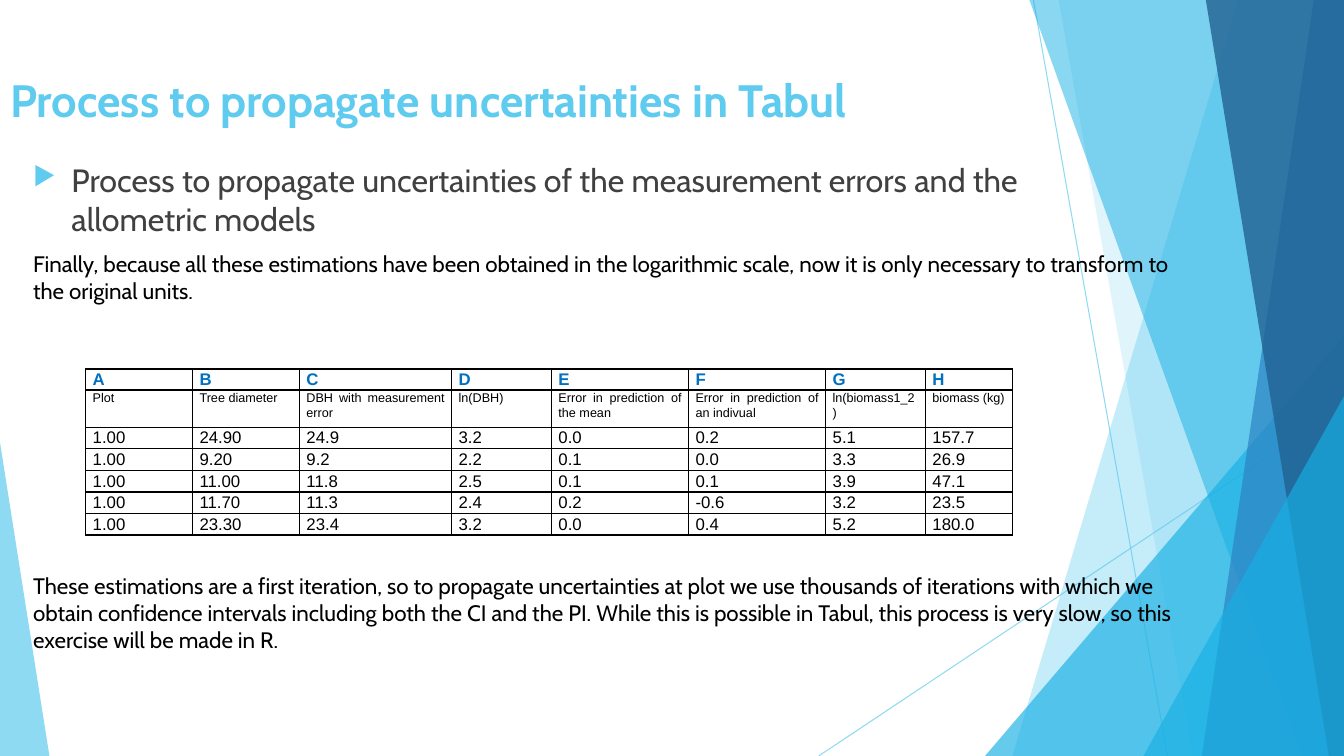
import pptx
import pptx.util
import pptx.dml.color
import pptx.enum.shapes
import pptx.enum.text
import pptx.oxml
import pptx.oxml.ns
import lxml.etree

COLORS = {
    "sky": "5FCBEF", "cyan": "17B0E4", "blue": "2E83C3", "navy": "226292",
    "body": "404040", "black": "000000", "header": "0070C0",
}
GRID = pptx.util.Inches(0.1)  # the slide is 133.3 columns by 75 rows
COLUMNS, ROWS = 133.3, 75
PP_ALIGN = pptx.enum.text.PP_ALIGN
qn = pptx.oxml.ns.qn


def write_text(frame, text, size, color="black", font="Cabin", bold=False,
               align=PP_ALIGN.LEFT, line_spacing=1.0, space_before=0, new=False):
    """Write one paragraph, the first of the frame unless new is set."""
    paragraph = frame.add_paragraph() if new else frame.paragraphs[0]
    paragraph.alignment = align
    paragraph.line_spacing = line_spacing
    paragraph.space_before = pptx.util.Pt(space_before)
    run = paragraph.add_run()
    run.text = text
    run.font.size = pptx.util.Pt(size)
    run.font.name = font
    run.font.bold = bold
    run.font.color.rgb = pptx.dml.color.RGBColor.from_string(COLORS[color])
    return paragraph


def paint(shape, color, opacity):
    """Give a facet its translucent fill, or a connector its translucent line."""
    rgb = pptx.dml.color.RGBColor.from_string(COLORS[color])
    if hasattr(shape, "fill"):
        shape.shadow.inherit = False
        shape.fill.solid()
        shape.fill.fore_color.rgb = rgb
        shape.line.fill.background()
    else:
        shape.line.color.rgb = rgb
        shape.line.width = pptx.util.Pt(0.75)
        lxml.etree.SubElement(shape._element.spPr, qn("a:effectLst"))
    color_element = next(shape._element.iter(qn("a:srgbClr")))
    lxml.etree.SubElement(color_element, qn("a:alpha"), val=str(opacity * 1000))


presentation = pptx.Presentation()
presentation.slide_width = round(COLUMNS * GRID)
presentation.slide_height = ROWS * GRID
slide = presentation.slides.add_slide(presentation.slide_layouts[5])
shapes = slide.shapes

# Thin lines behind the facets
for ends in [(102.5, 0, 115.8, ROWS), (COLUMNS, 40.3, 81.2, ROWS)]:
    line = shapes.add_connector(pptx.enum.shapes.MSO_CONNECTOR.STRAIGHT,
                                *(round(end * GRID) for end in ends))
    paint(line, "sky", 70)

# Facets: a band runs from its top and bottom columns to the right edge,
# a triangle is (left, top, width, apex) and stands on the bottom edge
facets = [
    ("band", (122.8, 100.4), "sky", 36),
    ("band", (105, 118.3), "sky", 20),
    ("triangle", (97.7, 33.3, 35.6, 1), "cyan", 66),
    ("band", (102.1, 129.1), "cyan", 50),
    ("band", (130.3, 119.2), "blue", 70),
    ("band", (119.6, 131.8), "navy", 80),
    ("triangle", (113.4, 39.3, 19.9, 1), "cyan", 66),
    ("triangle", (0, 43.9, 4.9, 0), "sky", 70),
]
for kind, geometry, color, opacity in facets:
    if kind == "band":
        top, bottom = geometry
        builder = shapes.build_freeform(round(top * GRID), 0)
        corners = [(COLUMNS, 0), (COLUMNS, ROWS), (bottom, ROWS)]
        builder.add_line_segments([(round(x * GRID), round(y * GRID)) for x, y in corners])
        facet = builder.convert_to_shape()
    else:
        left, top, width, apex = geometry
        facet = shapes.add_shape(
            pptx.enum.shapes.MSO_SHAPE.ISOSCELES_TRIANGLE,
            *(round(length * GRID) for length in (left, top, width, ROWS - top)))
        facet.adjustments[0] = apex
    paint(facet, color, opacity)

# Title, bulleted heading and explanation
title = shapes.title
heading = shapes.add_textbox(0, 0, 0, 0)
explanation = shapes.add_textbox(0, 0, 0, 0)
for shape, place in [(title, (0, 6.7, 107.2, 7.4)),
                     (heading, (2.3, 15.4, 113.9, 5.5)),
                     (explanation, (2.3, 24.3, 117.5, 44.1))]:
    shape.left, shape.top, shape.width, shape.height = (
        round(length * GRID) for length in place)
    shape.text_frame.word_wrap = True
    shape.text_frame.auto_size = pptx.enum.text.MSO_AUTO_SIZE.NONE
    shape.text_frame.vertical_anchor = pptx.enum.text.MSO_ANCHOR.TOP

write_text(title.text_frame, "Process to propagate uncertainties in Tabul",
           size=32.4, color="sky", bold=True)
bulleted = write_text(
    heading.text_frame,
    "Process to propagate uncertainties of the measurement errors and the allometric models",
    size=23, color="body")
properties = bulleted._p.get_or_add_pPr()
indent = round(3.8 * GRID)
properties.set("marL", str(indent))
properties.set("indent", str(-indent))
bullet_color = lxml.etree.SubElement(properties, qn("a:buClr"))
lxml.etree.SubElement(bullet_color, qn("a:srgbClr"), val=COLORS["sky"])
lxml.etree.SubElement(properties, qn("a:buSzPct"), val="80000")
lxml.etree.SubElement(properties, qn("a:buChar"), char="▶")

write_text(
    explanation.text_frame,
    "Finally, because all these estimations have been obtained in the logarithmic scale, "
    "now it is only necessary to transform to the original units.", size=16)
write_text(
    explanation.text_frame,
    "These estimations are a first iteration, so to propagate uncertainties at plot we use "
    "thousands of iterations with which we obtain confidence intervals including both the CI "
    "and the PI. While this is possible in Tabul, this process is very slow, so this exercise "
    "will be made in R.", size=16, space_before=192, new=True)

# Table of trees
tree_rows = [
    list("ABCDEFGH"),
    ["Plot", "Tree diameter", "DBH with measurement error", "ln(DBH)",
     "Error in prediction of the mean", "Error in prediction of an indivual",
     "ln(biomass1_2)", "biomass (kg)"],
    ["1.00", "24.90", "24.9", "3.2", "0.0", "0.2", "5.1", "157.7"],
    ["1.00", "9.20", "9.2", "2.2", "0.1", "0.0", "3.3", "26.9"],
    ["1.00", "11.00", "11.8", "2.5", "0.1", "0.1", "3.9", "47.1"],
    ["1.00", "11.70", "11.3", "2.4", "0.2", "-0.6", "3.2", "23.5"],
    ["1.00", "23.30", "23.4", "3.2", "0.0", "0.4", "5.2", "180.0"],
]
column_widths = [10.6, 10.6, 15.1, 9.9, 13.6, 13.6, 9.9, 8.6]
row_heights = [2.1, 3.7] + [2.14] * 5
row_formats = [{"size": 12, "color": "header", "bold": True}, {"size": 9}] + [{"size": 12}] * 5

table = shapes.add_table(
    len(tree_rows), len(column_widths),
    *(round(length * GRID) for length in (8.5, 36.6, sum(column_widths), sum(row_heights)))).table
table.first_row = table.horz_banding = False
for column, width in zip(table.columns, column_widths):
    column.width = round(width * GRID)
for row, height, texts, row_format in zip(table.rows, row_heights, tree_rows, row_formats):
    row.height = round(height * GRID)
    for cell, text in zip(row.cells, texts):
        cell.margin_left = cell.margin_right = round(0.7 * GRID)
        cell.margin_top = cell.margin_bottom = 0
        write_text(cell.text_frame, text, font="Arial", align=PP_ALIGN.JUSTIFY,
                   line_spacing=1.07, **row_format)
        cell.fill.background()
        cell_properties = cell._tc.get_or_add_tcPr()
        for position, side in enumerate(("lnL", "lnR", "lnT", "lnB")):
            border = lxml.etree.Element(qn("a:" + side), w=str(pptx.util.Pt(1)))
            border_fill = lxml.etree.SubElement(border, qn("a:solidFill"))
            lxml.etree.SubElement(border_fill, qn("a:srgbClr"), val=COLORS["black"])
            cell_properties.insert(position, border)

presentation.save("out.pptx")
